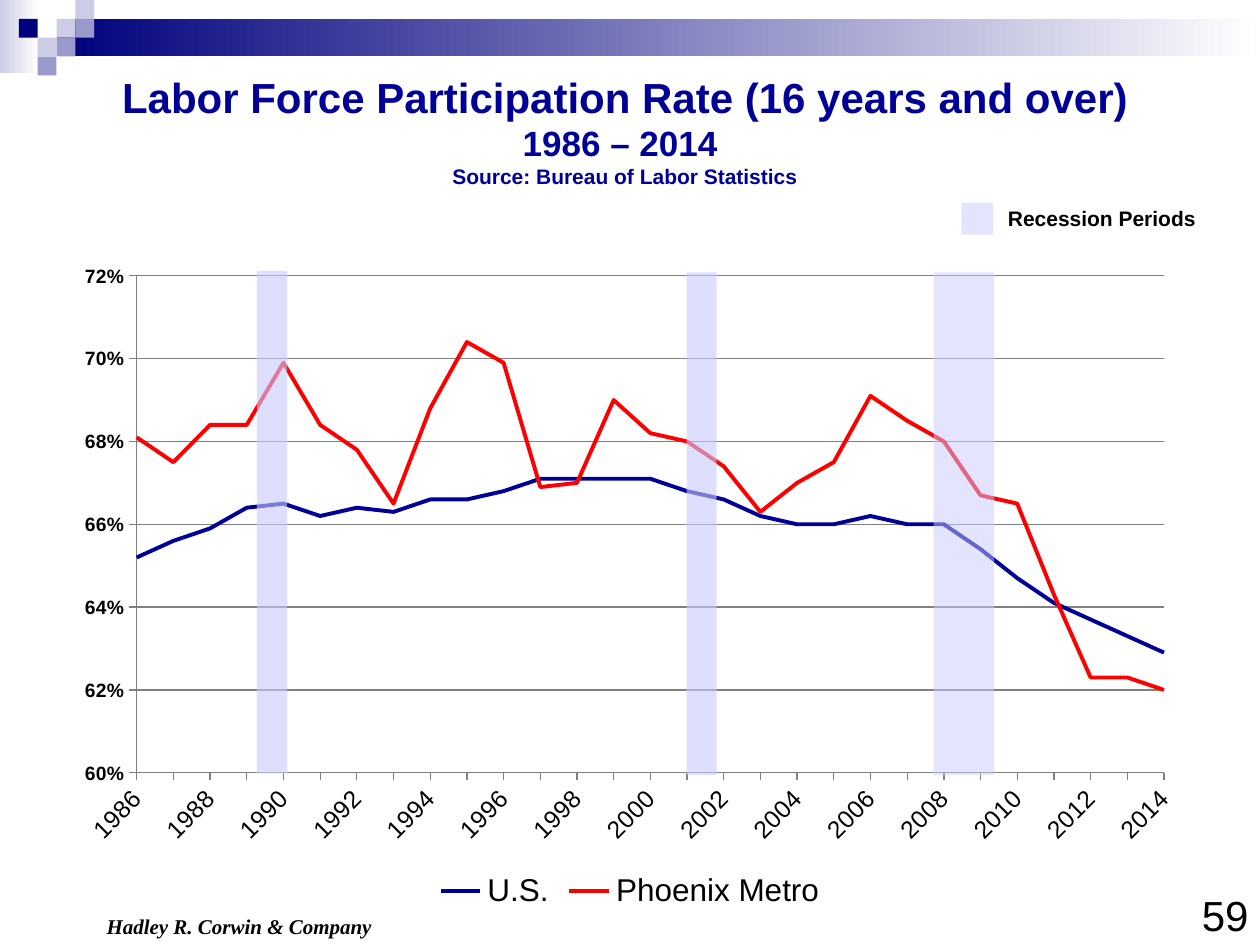
from lxml.etree import SubElement
from pptx import Presentation
from pptx.chart.data import CategoryChartData
from pptx.dml.color import RGBColor
from pptx.enum.chart import XL_CHART_TYPE, XL_LEGEND_POSITION, XL_TICK_LABEL_POSITION, XL_TICK_MARK
from pptx.enum.shapes import MSO_SHAPE
from pptx.enum.text import MSO_ANCHOR, MSO_AUTO_SIZE, PP_ALIGN
from pptx.oxml import parse_xml
from pptx.oxml.ns import nsdecls, qn
from pptx.util import Cm, Pt

YEARS = [str(year) for year in range(1986, 2015)]
RATES = {
    "U.S.": ("000099", [
        65.2, 65.6, 65.9, 66.4, 66.5, 66.2, 66.4, 66.3, 66.6, 66.6,
        66.8, 67.1, 67.1, 67.1, 67.1, 66.8, 66.6, 66.2, 66.0, 66.0,
        66.2, 66.0, 66.0, 65.4, 64.7, 64.1, 63.7, 63.3, 62.9]),
    "Phoenix Metro": ("FF0000", [
        68.1, 67.5, 68.4, 68.4, 69.9, 68.4, 67.8, 66.5, 68.8, 70.4,
        69.9, 66.9, 67.0, 69.0, 68.2, 68.0, 67.4, 66.3, 67.0, 67.5,
        69.1, 68.5, 68.0, 66.7, 66.5, 64.3, 62.3, 62.3, 62.0]),
}
SQUARE = 0.38
MOSAIC = [
    (3, 1, "CCCCE6"), (4, 0, "CCCCE6"), (4, 1, "9999CC"), (2, 2, "CCCCE6"),
    (1, 1, "00007D"), (3, 2, "9999CC"), (2, 3, "9999CC"),
]
RECESSIONS = [(5.18, 5.46, 0.61, 61), (13.84, 5.49, 0.61, 61), (18.82, 5.49, 1.22, 50)]


def color(value):
    return RGBColor.from_string(value)


class SlideBuilder:
    font = "Arial"
    ink = "000000"
    title_ink = "000099"
    grid = "808080"
    band = "CACAFF"

    def __init__(self, page):
        self.page = page

    def style(self, font, size, ink=None, bold=False, italic=False, name=None):
        font.name = name or self.font
        font.size = Pt(size)
        font.bold = bold
        font.italic = italic
        font.color.rgb = color(ink or self.ink)

    def title(self, lines, left, top, width, height):
        box = self.page.shapes.title
        box.left, box.top, box.width, box.height = map(Cm, (left, top, width, height))
        frame = box.text_frame
        frame.auto_size = MSO_AUTO_SIZE.NONE
        frame.vertical_anchor = MSO_ANCHOR.BOTTOM
        para = frame.paragraphs[0]
        para.text = "\v".join(text for text, size in lines)
        para.alignment = PP_ALIGN.CENTER
        for span, (text, size) in zip(para.runs, lines):
            self.style(span.font, size, self.title_ink, bold=True)

    def text(self, words, left, top, width, height, size, align=PP_ALIGN.LEFT, wrap=True, **look):
        box = self.page.shapes.add_textbox(*map(Cm, (left, top, width, height)))
        frame = box.text_frame
        frame.text = words
        frame.word_wrap = wrap
        para = frame.paragraphs[0]
        para.alignment = align
        self.style(para.runs[0].font, size, **look)

    def rectangle(self, left, top, width, height):
        box = self.page.shapes.add_shape(MSO_SHAPE.RECTANGLE, *map(Cm, (left, top, width, height)))
        box.shadow.inherit = False
        box.line.fill.background()
        return box

    def block(self, left, top, width, height, fill, opacity=100):
        box = self.rectangle(left, top, width, height)
        box.fill.solid()
        box.fill.fore_color.rgb = color(fill)
        if opacity < 100:
            tone = box.fill._xPr.find(".//" + qn("a:srgbClr"))
            SubElement(tone, qn("a:alpha"), val=str(opacity * 1000))

    def fade(self, left, top, width, height, start):
        box = self.rectangle(left, top, width, height)
        box.fill.gradient()
        box.fill.gradient_angle = 0
        for stop, tone in zip(box.fill.gradient_stops, (start, "FFFFFF")):
            stop.color.rgb = color(tone)

    def axis(self, axis, size, bold=False):
        axis.major_tick_mark = XL_TICK_MARK.OUTSIDE
        axis.minor_tick_mark = XL_TICK_MARK.NONE
        axis.tick_label_position = XL_TICK_LABEL_POSITION.LOW
        axis.format.line.color.rgb = color(self.grid)
        axis.format.line.width = Pt(0.75)
        self.style(axis.tick_labels.font, size, bold=bold)

    def line_chart(self, left, top, width, height):
        data = CategoryChartData(number_format="0.0%")
        data.categories = YEARS
        for name, (tone, percents) in RATES.items():
            data.add_series(name, [round(percent / 100, 3) for percent in percents])
        frame = self.page.shapes.add_chart(
            XL_CHART_TYPE.LINE, *map(Cm, (left, top, width, height)), data)
        chart = frame.chart
        chart.has_title = False
        self.style(chart.font, 18)
        chart.has_legend = True
        chart.legend.position = XL_LEGEND_POSITION.BOTTOM
        chart.legend.include_in_layout = False
        self.style(chart.legend.font, 18)
        chart.plots[0].vary_by_categories = False
        for series, (tone, percents) in zip(chart.plots[0].series, RATES.values()):
            series.smooth = False
            series.format.line.color.rgb = color(tone)
            series.format.line.width = Pt(2.25)

        years, rates = chart.category_axis, chart.value_axis
        self.axis(years, 14)
        self.axis(rates, 11, bold=True)
        rates.minimum_scale, rates.maximum_scale, rates.major_unit = 0.6, 0.72, 0.02
        rates.tick_labels.number_format = "0%"
        rates.tick_labels.number_format_is_linked = False
        rates.has_major_gridlines = True
        rates.major_gridlines.format.line.color.rgb = color(self.grid)
        rates.major_gridlines.format.line.width = Pt(0.75)

        years._element.find(".//" + qn("a:bodyPr")).set("rot", "-2700000")
        last = years._element.find(qn("c:noMultiLvlLbl"))
        for tag, step in (("tickLblSkip", 2), ("tickMarkSkip", 1)):
            last.addprevious(parse_xml(f'<c:{tag} {nsdecls("c")} val="{step}"/>'))
        crossing = parse_xml(f'<c:crossBetween {nsdecls("c")} val="midCat"/>')
        rates._element.find(qn("c:crosses")).addnext(crossing)
        self.plot_layout(chart, x=0.065, y=0.036, w=0.906, h=0.75)

    def plot_layout(self, chart, **fractions):
        area = chart._chartSpace.find(".//" + qn("c:plotArea"))
        layout = area.find(qn("c:layout"))
        if layout is None:
            layout = parse_xml(f'<c:layout {nsdecls("c")}/>')
            area.insert(0, layout)
        manual = SubElement(layout, qn("c:manualLayout"))
        settings = {"layoutTarget": "inner", "xMode": "edge", "yMode": "edge", **fractions}
        for tag, value in settings.items():
            SubElement(manual, qn("c:" + tag), val=str(value))


def main():
    deck = Presentation()
    deck.slide_width, deck.slide_height = Cm(25.4), Cm(19.05)
    page = deck.slides.add_slide(deck.slide_layouts[5])
    builder = SlideBuilder(page)

    builder.fade(0, 0, 0.78, 1.47, "CCCCE6")
    builder.fade(3 * SQUARE, SQUARE, 25.4 - 3 * SQUARE, 2 * SQUARE, "00007D")
    for column, row, tone in MOSAIC:
        builder.block(column * SQUARE, row * SQUARE, SQUARE, SQUARE, tone)

    builder.title([
        ("Labor Force Participation Rate (16 years and over)", 24),
        ("1986 – 2014 ", 20),
        ("Source: Bureau of Labor Statistics", 12),
    ], 0, 0.76, 25.2, 3.18)
    builder.line_chart(1.27, 5.08, 22.86, 13.36)
    for left, top, width, opacity in RECESSIONS:
        builder.block(left, top, width, 10.13, builder.band, opacity)
    builder.block(19.38, 4.09, 0.64, 0.64, builder.band, 50)
    builder.text("Recession Periods", 20.07, 4.01, 4.29, 0.76, 12, wrap=False, bold=True)
    builder.text("Hadley R. Corwin & Company", 1.9, 18.29, 6.35, 0.76, 12,
                 bold=True, italic=True, name="Times New Roman")
    builder.text("59", 22.83, 17.81, 2.59, 1.27, 24, align=PP_ALIGN.RIGHT)
    deck.save("out.pptx")


if __name__ == "__main__":
    main()
